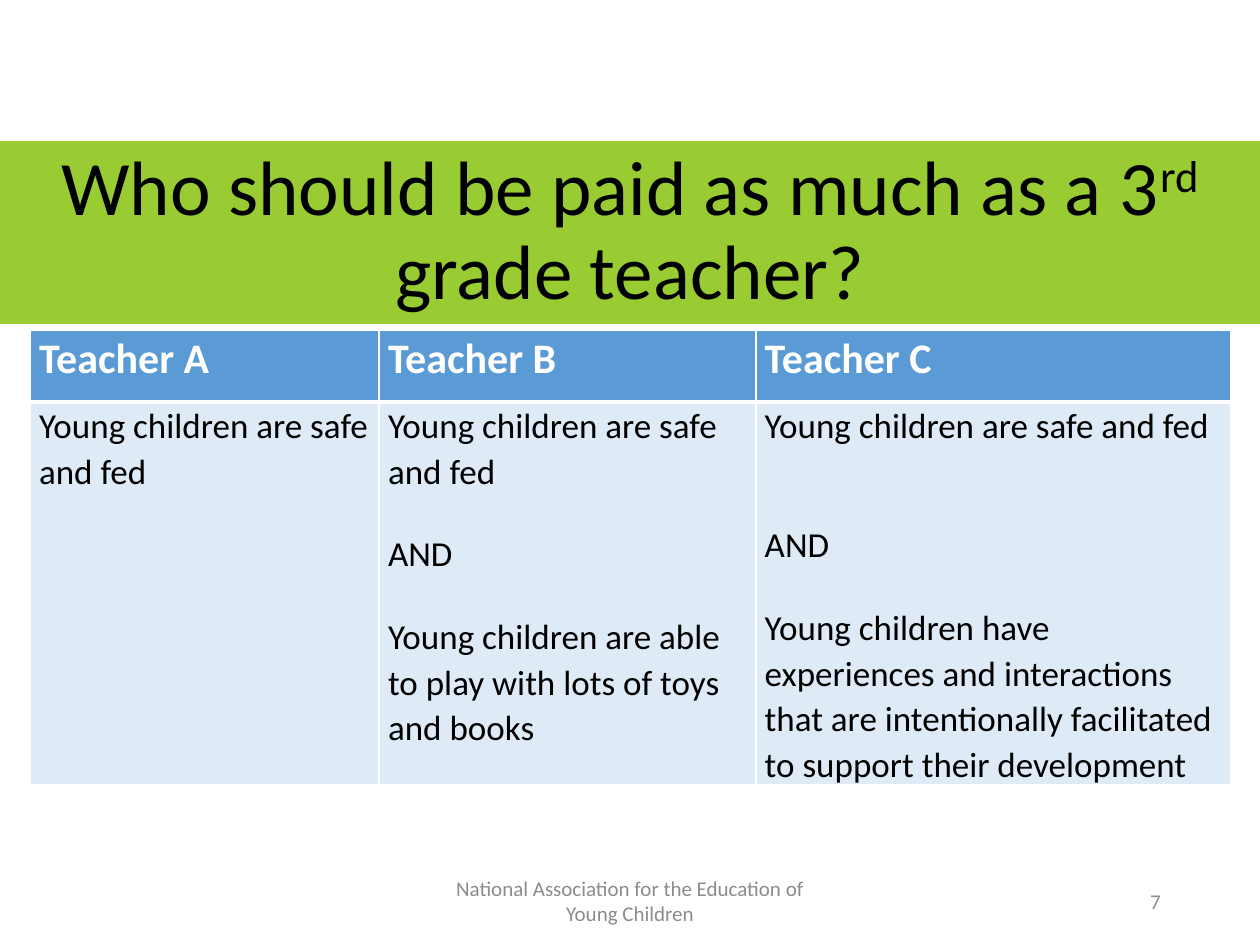
"""Build the slide comparing three teachers' duties and pay."""
from pptx import Presentation
from pptx.dml.color import RGBColor
from pptx.enum import shapes, text
from pptx.oxml import parse_xml
from pptx.oxml.ns import nsdecls
from pptx.util import Inches, Pt

THEME = {
    "font": "Calibri", "title": 44, "heading": 24, "body": 20, "footer": 12,
    "banner": "99CC33", "header": "5B9BD5", "cell": "DEEBF7",
    "ink": "000000", "light": "FFFFFF", "muted": "8C8C8C",
}
TITLE = [("Who should be paid as much as a 3", 0), ("rd", 30000), (" grade teacher?", 0)]
SAFE = "Young children are safe and fed"
TEACHERS = [
    ("Teacher A", 2.77, [(SAFE, 0)]),
    ("Teacher B", 2.99, [
        (SAFE, 0), ("AND", 21),
        ("Young children are able to play with lots of toys and books", 21)]),
    ("Teacher C", 3.77, [
        (SAFE, 0), ("AND", 42),
        ("Young children have experiences and interactions that are intentionally "
         "facilitated to support their development", 21)]),
]
ROW_HEIGHTS = [0.57, 3.04]
FOOTERS = [
    ("National Association for the Education of Young Children", 3.31, 3.38,
     text.PP_ALIGN.CENTER),
    ("7", 7.06, 2.25, text.PP_ALIGN.RIGHT),
]


def style(font, size, color, bold=False):
    font.name, font.size, font.bold = THEME["font"], Pt(THEME[size]), bold
    font.color.rgb = RGBColor.from_string(THEME[color])


def add_banner(slide):
    banner = slide.shapes.add_shape(
        shapes.MSO_SHAPE.RECTANGLE, 0, Inches(1.12), Inches(10), Inches(1.45))
    banner.shadow.inherit = False
    banner.fill.solid()
    banner.fill.fore_color.rgb = RGBColor.from_string(THEME["banner"])
    banner.line.fill.background()
    banner.text_frame.word_wrap = True
    banner.text_frame.vertical_anchor = text.MSO_ANCHOR.MIDDLE
    question = banner.text_frame.paragraphs[0]
    question.alignment, question.line_spacing = text.PP_ALIGN.CENTER, 0.9
    for words, baseline in TITLE:
        run = question.add_run()
        run.text = words
        style(run.font, "title", "ink")
        if baseline:
            run._r.get_or_add_rPr().set("baseline", str(baseline))


def add_borders(cell, widths):
    for side, width in widths.items():
        cell._tc.get_or_add_tcPr().append(parse_xml(
            f'<a:ln{side} {nsdecls("a")} w="{Pt(width)}"><a:solidFill>'
            f'<a:srgbClr val="{THEME["light"]}"/></a:solidFill></a:ln{side}>'))


def fill_cell(cell, paragraphs, fill, borders, size, color, bold=False):
    cell.margin_left = cell.margin_right = Inches(0.07)
    cell.margin_top = cell.margin_bottom = 0
    add_borders(cell, borders)
    cell.fill.solid()
    cell.fill.fore_color.rgb = RGBColor.from_string(THEME[fill])
    cell.text_frame.text = "\n".join(words for words, _ in paragraphs)
    for paragraph, (_, gap) in zip(cell.text_frame.paragraphs, paragraphs):
        paragraph.line_spacing = 1.07
        if gap:
            paragraph.space_before = Pt(gap)
        style(paragraph.runs[0].font, size, color, bold)


def add_comparison(slide):
    widths = [width for _, width, _ in TEACHERS]
    comparison = slide.shapes.add_table(
        len(ROW_HEIGHTS), len(TEACHERS), Inches(0.24), Inches(2.62),
        Inches(sum(widths)), Inches(sum(ROW_HEIGHTS))).table
    for row, height in zip(comparison.rows, ROW_HEIGHTS):
        row.height = Inches(height)
    for index, (teacher, width, duties) in enumerate(TEACHERS):
        comparison.columns[index].width = Inches(width)
        fill_cell(comparison.cell(0, index), [(teacher, 0)], "header",
                  {"L": 1, "R": 1, "T": 1, "B": 3}, "heading", "light", True)
        fill_cell(comparison.cell(1, index), duties, "cell",
                  {"L": 1, "R": 1, "T": 3, "B": 1}, "body", "ink")


def add_footers(slide):
    for words, left, width, alignment in FOOTERS:
        frame = slide.shapes.add_textbox(
            Inches(left), Inches(6.95), Inches(width), Inches(0.4)).text_frame
        frame.word_wrap = True
        frame.vertical_anchor = text.MSO_ANCHOR.MIDDLE
        frame.text = words
        frame.paragraphs[0].alignment = alignment
        style(frame.paragraphs[0].runs[0].font, "footer", "muted")


def main():
    deck = Presentation()
    deck.slide_width, deck.slide_height = Inches(10), Inches(7.5)
    slide = deck.slides.add_slide(deck.slide_layouts[6])
    add_banner(slide)
    add_footers(slide)
    add_comparison(slide)
    deck.save("out.pptx")


if __name__ == "__main__":
    main()
